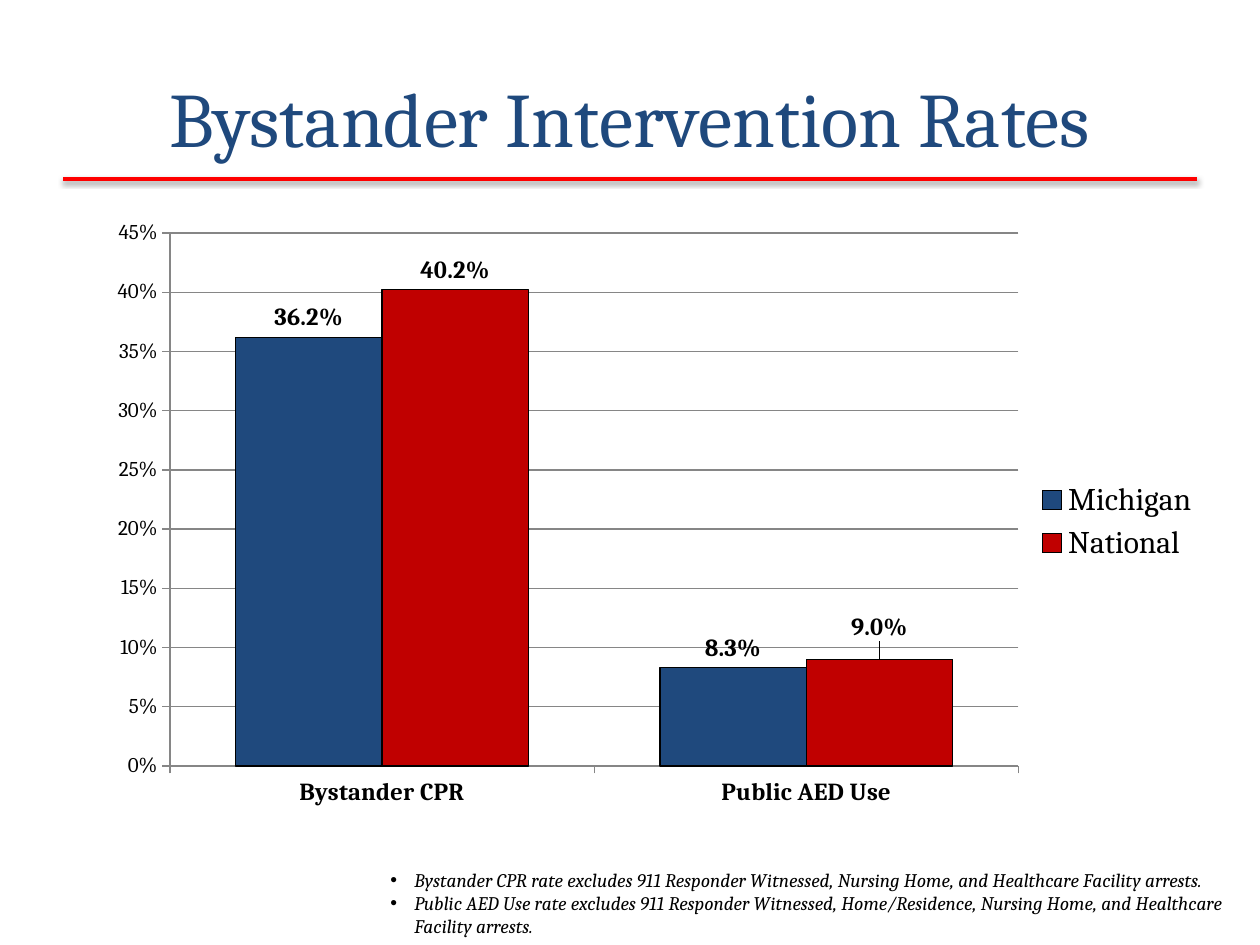
from lxml import etree
from pptx import Presentation
from pptx.chart.data import CategoryChartData
from pptx.dml.color import RGBColor
from pptx.enum.chart import XL_CHART_TYPE, XL_LABEL_POSITION, XL_LEGEND_POSITION, XL_TICK_MARK
from pptx.enum.shapes import MSO_CONNECTOR
from pptx.enum.text import MSO_ANCHOR, PP_ALIGN
from pptx.oxml import parse_xml
from pptx.oxml.ns import nsdecls, qn
from pptx.util import Inches, Pt

COLUMN = XL_CHART_TYPE.COLUMN_CLUSTERED
OUT_END = XL_LABEL_POSITION.OUTSIDE_END
RIGHT = XL_LEGEND_POSITION.RIGHT
TICK_OUT = XL_TICK_MARK.OUTSIDE
STRAIGHT = MSO_CONNECTOR.STRAIGHT
MIDDLE = MSO_ANCHOR.MIDDLE
CENTER = PP_ALIGN.CENTER

FONT = "Cambria"
COLORS = {"navy": "1F497D", "red": "C00000", "rule": "FF0000",
          "black": "000000", "grid": "868686"}
CATS = ["Bystander CPR", "Public AED Use"]
SERIES = [("Michigan", (0.362, 0.083), "navy"),
          ("National", (0.402, 0.09), "red")]
NOTES = [
    "Bystander CPR rate excludes 911 Responder Witnessed, Nursing Home, "
    "and Healthcare Facility arrests.",
    "Public AED Use rate excludes 911 Responder Witnessed, Home/Residence, "
    "Nursing Home, and Healthcare Facility arrests.",
]


def rgb(name):
    """Return the named colour."""
    return RGBColor.from_string(COLORS[name])


def style(font, size, color="black", bold=False, italic=False):
    """Set the look of a font."""
    font.name, font.size = FONT, Pt(size)
    font.bold, font.italic = bold, italic
    font.color.rgb = rgb(color)


def stroke(line, color, width=0.75):
    """Set the colour and width of a line."""
    line.color.rgb = rgb(color)
    line.width = Pt(width)


def add_box(slide, left, top, width, height):
    """Add a wrapping text box and return its frame."""
    box = slide.shapes.add_textbox(Inches(left), Inches(top), Inches(width), Inches(height))
    box.text_frame.word_wrap = True
    return box.text_frame


def add_rule(slide):
    """Add the red rule with its soft shadow."""
    rule = slide.shapes.add_connector(
        STRAIGHT, Inches(0.5), Inches(1.42), Inches(9.5), Inches(1.42))
    stroke(rule.line, "rule", 2)
    rule._element.spPr.append(parse_xml(
        f'<a:effectLst {nsdecls("a")}><a:outerShdw blurRad="{Pt(3.1)}" '
        f'dist="{Pt(1.6)}" dir="5400000" rotWithShape="0">'
        f'<a:srgbClr val="{COLORS["black"]}"><a:alpha val="38000"/></a:srgbClr>'
        '</a:outerShdw></a:effectLst>'))


def add_title(slide, text):
    """Add the centred slide title."""
    frame = add_box(slide, 0.5, 0.3, 9, 1.25)
    frame.vertical_anchor = MIDDLE
    para = frame.paragraphs[0]
    para.alignment = CENTER
    run = para.add_run()
    run.text = text
    style(run.font, 44, "navy")


def add_notes(slide, notes):
    """Add the bulleted footnotes."""
    frame = add_box(slide, 3, 6.84, 7, 0.66)
    for i, note in enumerate(notes):
        para = frame.add_paragraph() if i else frame.paragraphs[0]
        props = para._p.get_or_add_pPr()
        props.set("marL", str(Inches(0.19)))
        props.set("indent", str(-Inches(0.19)))
        etree.SubElement(props, qn("a:buFont"), typeface="Arial")
        etree.SubElement(props, qn("a:buChar"), char="•")
        run = para.add_run()
        run.text = note
        style(run.font, 11, italic=True)


def layout(**parts):
    """Return a manual chart layout."""
    items = "".join(f'<c:{key} val="{val}"/>' for key, val in parts.items())
    return parse_xml(f'<c:layout {nsdecls("c")}><c:manualLayout>{items}'
                     '</c:manualLayout></c:layout>')


def set_plot(chart):
    """Place the inner plot area."""
    area = chart._chartSpace.chart.plotArea
    for old in area.findall(qn("c:layout")):
        area.remove(old)
    area.insert(0, layout(layoutTarget="inner", xMode="edge", yMode="edge",
                          x=0.085, y=0.042, w=0.745, h=0.846))


def set_axes(chart):
    """Style both axes and the gridlines."""
    cat, val = chart.category_axis, chart.value_axis
    for axis, size, bold in ((cat, 14, True), (val, 12, False)):
        axis.major_tick_mark = TICK_OUT
        style(axis.tick_labels.font, size, bold=bold)
        stroke(axis.format.line, "grid")
    val.minimum_scale, val.maximum_scale, val.major_unit = 0, 0.45, 0.05
    val.tick_labels.number_format = "0%"
    val.tick_labels.number_format_is_linked = False
    val.has_major_gridlines = True
    stroke(val.major_gridlines.format.line, "grid")


def set_series(series, color):
    """Style one set of columns and its labels."""
    series.format.fill.solid()
    series.format.fill.fore_color.rgb = rgb(color)
    stroke(series.format.line, "black")
    labels = series.data_labels
    labels.show_value = True
    labels.number_format = "0.0%"
    labels.number_format_is_linked = False
    labels.position = OUT_END
    style(labels.font, 14, bold=True)


def raise_label(series, index, shift):
    """Shift one data label upward."""
    label = series.points[index].data_label
    style(label.font, 14, bold=True)
    label.position = OUT_END
    node = series._element.find(f'.//{qn("c:dLbl")}')
    node.insert(1, layout(x=0, y=-shift))
    node.insert(2, parse_xml(
        f'<c:numFmt {nsdecls("c")} formatCode="0.0%" sourceLinked="0"/>'))


def add_rates(slide):
    """Add the column chart of rates."""
    data = CategoryChartData(number_format="0.0%")
    data.categories = CATS
    for name, vals, _ in SERIES:
        data.add_series(name, vals)
    chart = slide.shapes.add_chart(
        COLUMN, Inches(0.58), Inches(1.64), Inches(9.04), Inches(5), data).chart
    style(chart.font, 18)
    chart.has_title = False
    chart.has_legend = True
    chart.legend.position = RIGHT
    chart.legend.include_in_layout = False
    style(chart.legend.font, 18)
    plot = chart.plots[0]
    plot.gap_width, plot.overlap = 90, 0
    plot.vary_by_categories = False
    set_plot(chart)
    set_axes(chart)
    for series, (_, _, color) in zip(plot.series, SERIES):
        set_series(series, color)
    raise_label(plot.series[1], 1, 0.02)


def main():
    """Build and save the slide."""
    deck = Presentation()
    deck.slide_width, deck.slide_height = Inches(10), Inches(7.5)
    slide = deck.slides.add_slide(deck.slide_layouts[6])
    add_rule(slide)
    add_title(slide, "Bystander Intervention Rates")
    add_rates(slide)
    add_notes(slide, NOTES)
    deck.save("out.pptx")


if __name__ == "__main__":
    main()
